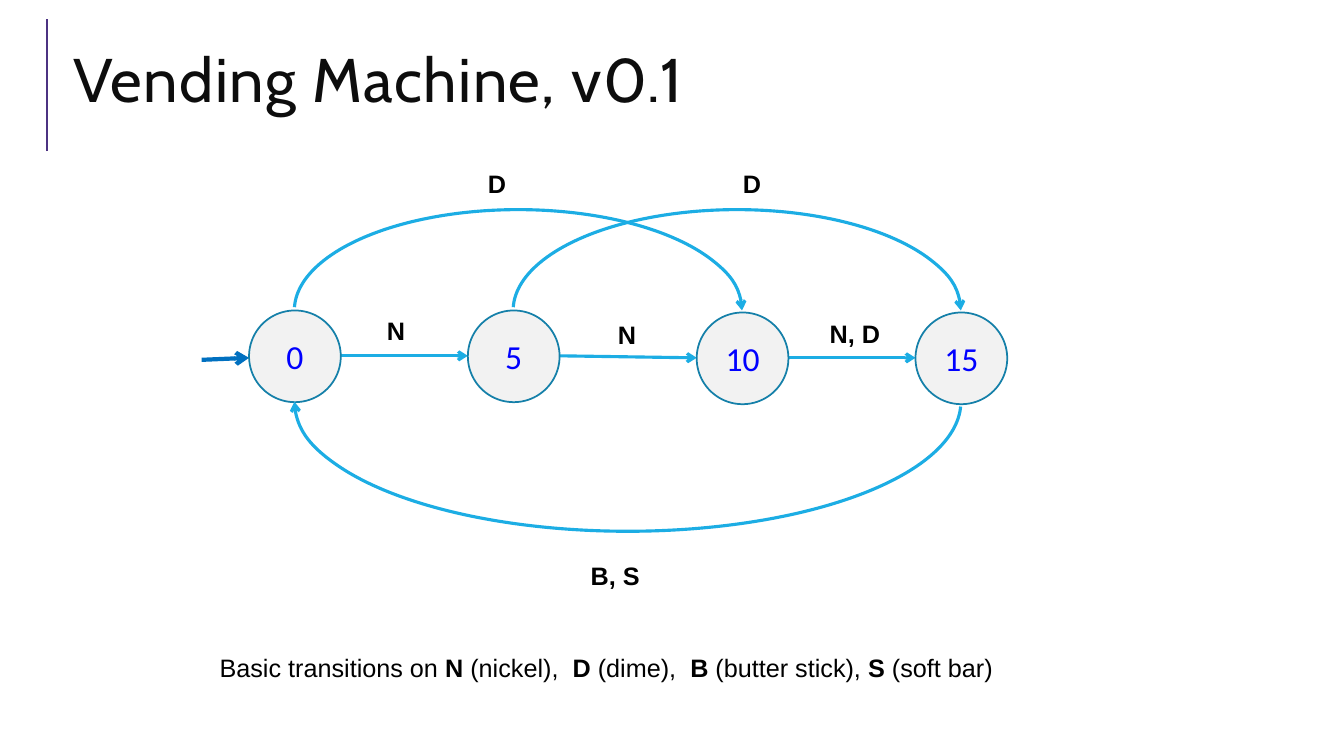
from pptx import Presentation
from pptx.dml.color import RGBColor
from pptx.enum.shapes import MSO_CONNECTOR as LINE, MSO_SHAPE as SHAPE
from pptx.enum.text import MSO_ANCHOR as ANCHOR, MSO_AUTO_SIZE as FIT, PP_ALIGN as ALIGN
from pptx.oxml.ns import qn
from pptx.util import Inches, Pt
from lxml import etree

COLORS = {
    "title": "0D0D0D", "rule": "4C3282", "text": "000000", "state": "0000FF",
    "state_fill": "F2F2F2", "state_line": "1580A9", "arrow": "1CADE4", "start": "0070C0",
}


def style_line(shape, color, width, arrow=True):
    shape.line.color.rgb = RGBColor.from_string(COLORS[color])
    shape.line.width = Pt(width)
    properties = shape._element.spPr
    if arrow:
        etree.SubElement(properties.find(qn("a:ln")), qn("a:tailEnd"), type="arrow")
    if properties.find(qn("a:effectLst")) is None:
        etree.SubElement(properties, qn("a:effectLst"))


def style_span(span, font, size, color, bold=False):
    span.font.name = font
    span.font.size = Pt(size)
    span.font.bold = bold
    span.font.color.rgb = RGBColor.from_string(COLORS[color])


deck = Presentation()
deck.slide_width, deck.slide_height = Inches(13.33), Inches(7.5)
page = deck.slides.add_slide(deck.slide_layouts[5])

# Title and the rule beside it
title = page.shapes.title
title.left, title.top, title.width, title.height = (
    Inches(0.63), Inches(0.29), Inches(12.23), Inches(1.11))
title.text_frame.text = "Vending Machine, v0.1"
title.text_frame.vertical_anchor = ANCHOR.MIDDLE
title.text_frame.auto_size = FIT.NONE
para = title.text_frame.paragraphs[0]
para.alignment = ALIGN.LEFT
para.line_spacing = 0.8
style_span(para.runs[0], "Cabin", 44, "title")
para.runs[0]._r.get_or_add_rPr().set("spc", "100")

# Straight lines: title rule, start arrow, steps between neighbouring states
lines = [
    (0.47, 1.5, 0.47, 0.19, "rule", 1.5),
    (2, 3.57, 2.47, 3.55, "start", 3),
    (3.38, 3.53, 4.64, 3.53, "arrow", 2.25),
    (5.55, 3.53, 6.91, 3.55, "arrow", 2.25),
    (7.81, 3.55, 9.08, 3.55, "arrow", 2.25),
]
for x1, y1, x2, y2, color, width in lines:
    line = page.shapes.add_connector(
        LINE.STRAIGHT, Inches(x1), Inches(y1), Inches(x2), Inches(y2))
    style_line(line, color, width, arrow=color != "rule")

# States
for name, left, top in [("0", 2.47, 3.08), ("5", 4.64, 3.08),
                        ("10", 6.91, 3.1), ("15", 9.08, 3.1)]:
    state = page.shapes.add_shape(
        SHAPE.OVAL, Inches(left), Inches(top), Inches(0.91), Inches(0.91))
    state.shadow.inherit = False
    state.fill.solid()
    state.fill.fore_color.rgb = RGBColor.from_string(COLORS["state_fill"])
    style_line(state, "state_line", 1.25, arrow=False)
    state.text_frame.text = name
    state.text_frame.word_wrap = False
    state.text_frame.vertical_anchor = ANCHOR.MIDDLE
    para = state.text_frame.paragraphs[0]
    para.alignment = ALIGN.CENTER
    style_span(para.runs[0], "Calibri", 24, "state")

# Curved transitions, each half an ellipse
for left, top, width, height, turn in [(5.09, 2.08, 4.44, 2, 0),
                                       (2.92, 2.7, 6.61, 2.57, 180),
                                       (2.92, 2.08, 4.44, 2, 0)]:
    arc = page.shapes.add_shape(
        SHAPE.ARC, Inches(left), Inches(top), Inches(width), Inches(height))
    arc.adjustments[0], arc.adjustments[1] = 108.5, 0
    arc.rotation = turn
    arc.shadow.inherit = False
    arc.fill.background()
    style_line(arc, "arrow", 2.25)

# Transition labels and caption, with bold spans marked True
caption = [
    ("Basic transitions on ", False), ("N ", True), ("(nickel),  ", False),
    ("D", True), (" (dime),  ", False), ("B", True), (" (butter stick), ", False),
    ("S", True), (" (soft bar)", False),
]
labels = [
    (4.74, 1.62, 0.43, 0.46, [("D", True)]),
    (7.27, 1.62, 0.43, 0.46, [("D", True)]),
    (3.74, 3.08, 0.43, 0.46, [("N", True)]),
    (6.03, 3.12, 0.43, 0.46, [("N", True)]),
    (8.13, 3.11, 0.8, 0.46, [("N, D", True)]),
    (5.76, 5.51, 0.78, 0.46, [("B, S", True)]),
    (2.08, 6.42, 8.07, 0.4, caption),
]
for left, top, width, height, spans in labels:
    box = page.shapes.add_textbox(Inches(left), Inches(top), Inches(width), Inches(height))
    box.text_frame.word_wrap = False
    box.text_frame.auto_size = FIT.SHAPE_TO_FIT_TEXT
    for text, bold in spans:
        span = box.text_frame.paragraphs[0].add_run()
        span.text = text
        style_span(span, "Arial", 18, "text", bold)

deck.save("out.pptx")
